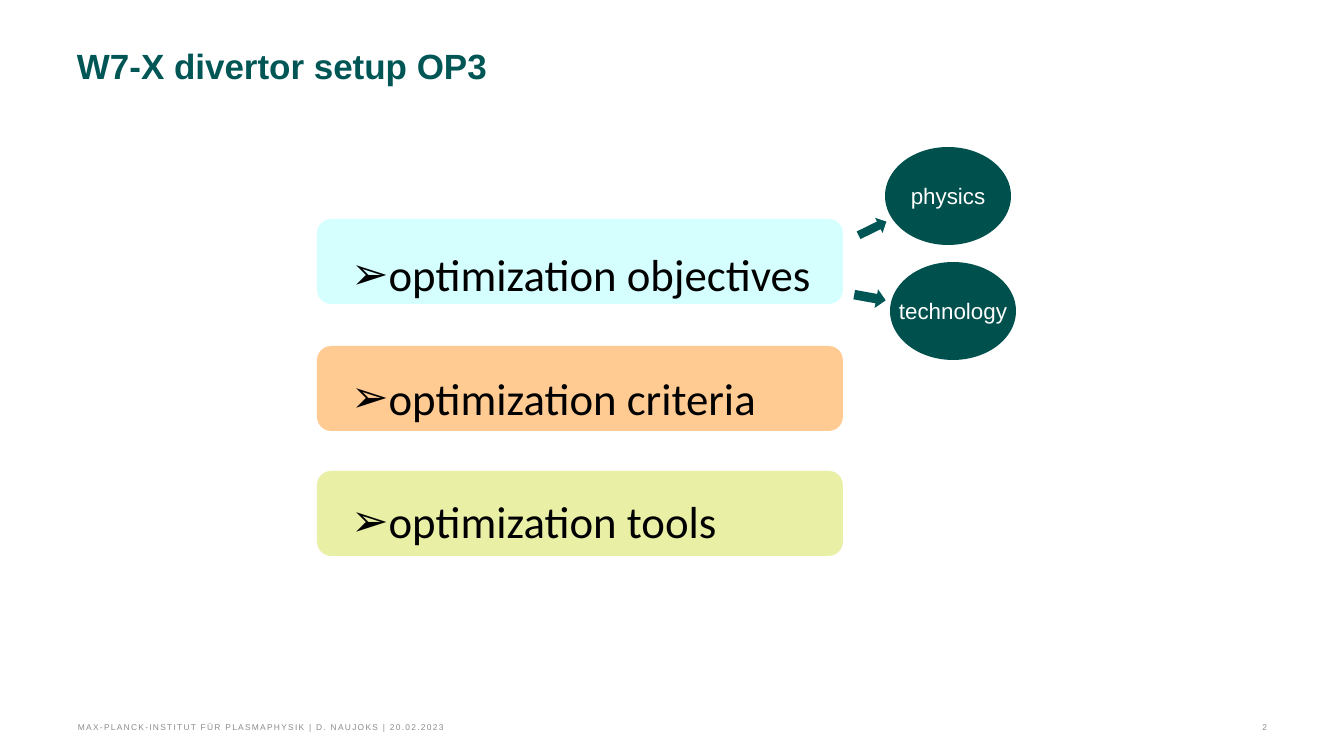
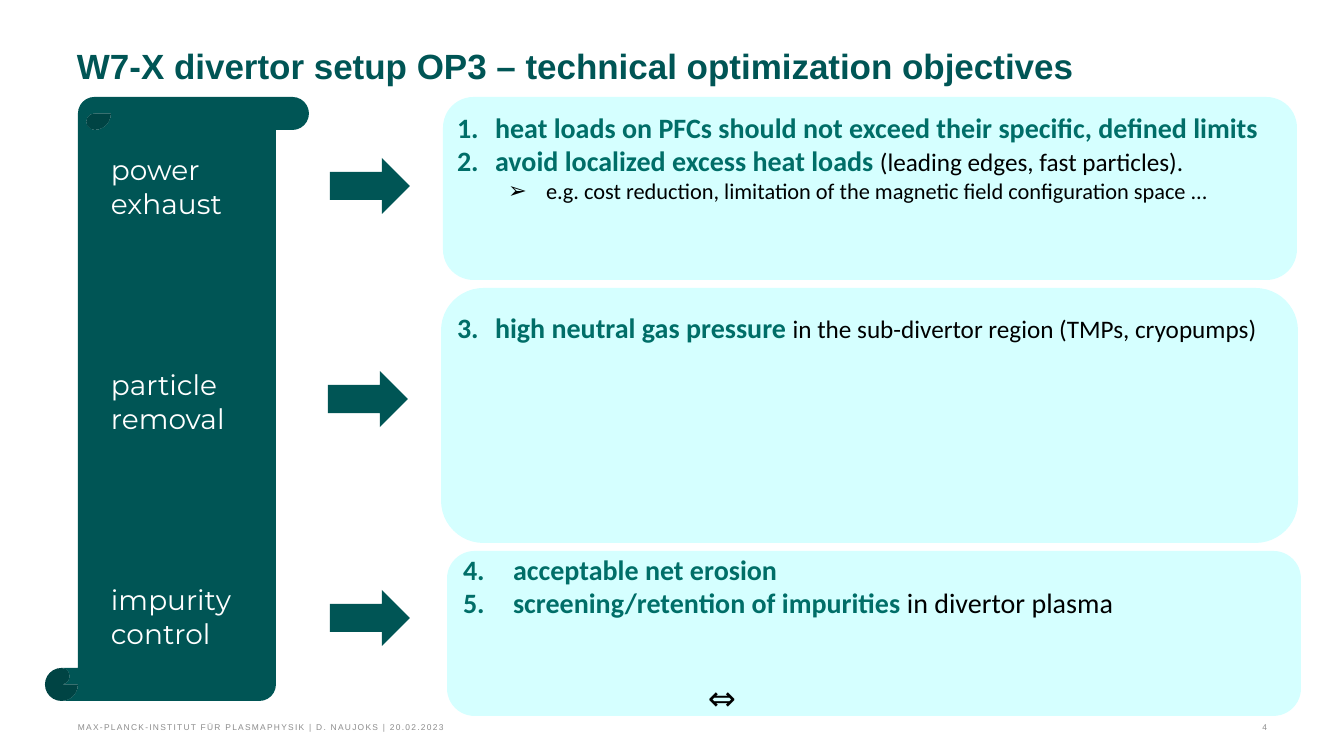
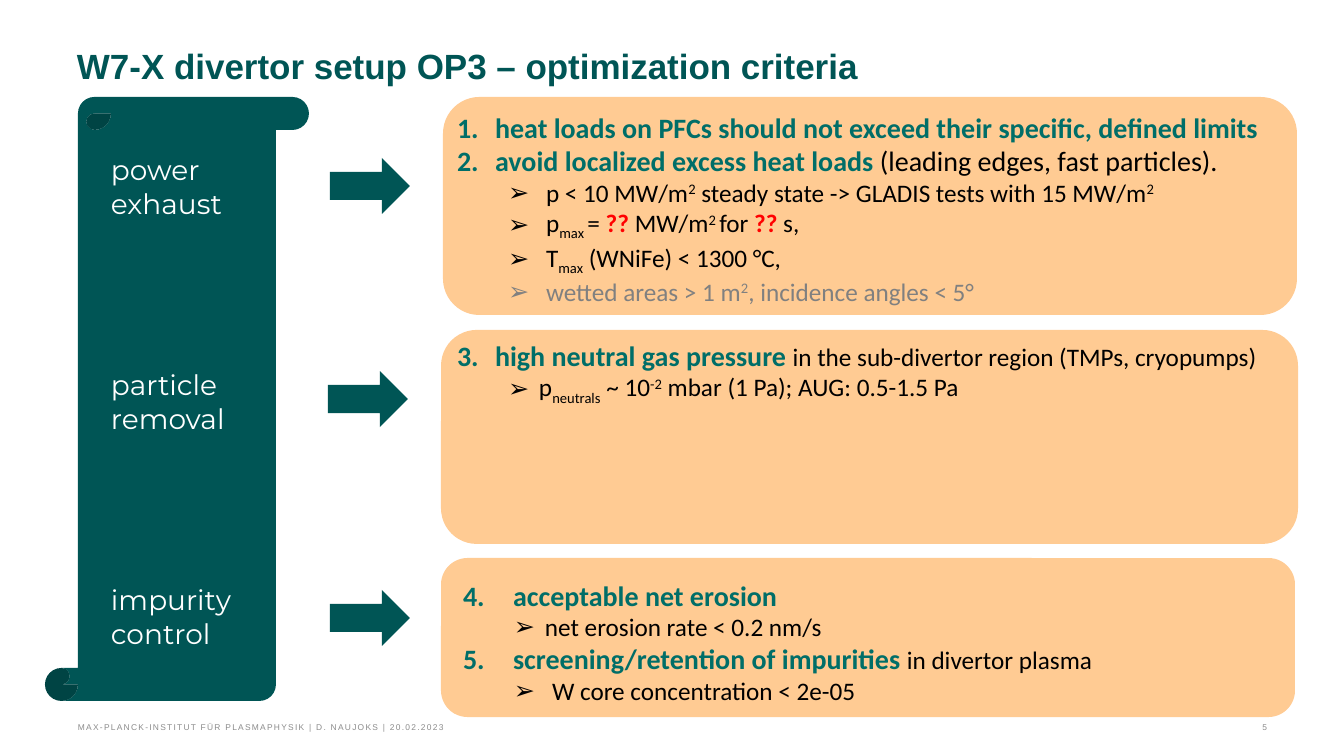
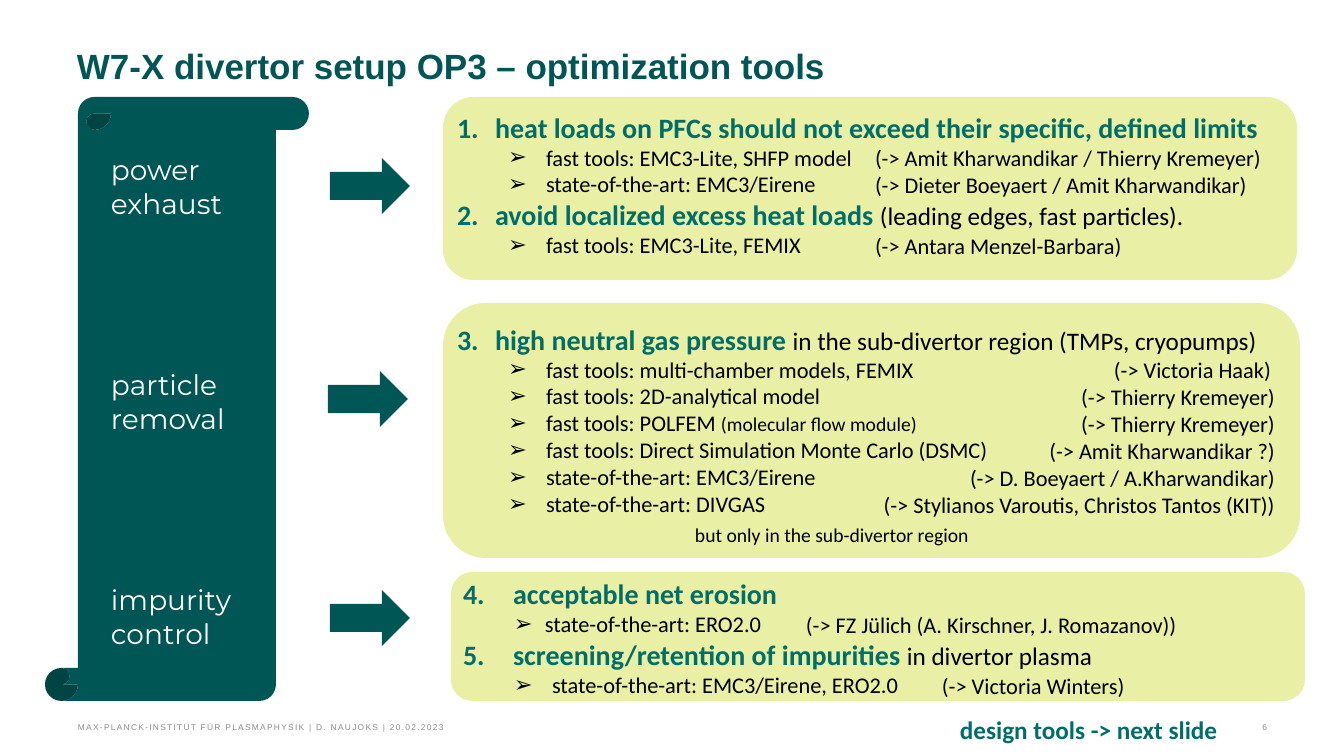
from dataclasses import dataclass
from lxml import etree
from pptx import Presentation
from pptx.dml.color import RGBColor
from pptx.enum.shapes import MSO_SHAPE
from pptx.enum.text import MSO_ANCHOR, MSO_AUTO_SIZE, PP_ALIGN
from pptx.oxml.ns import qn
from pptx.util import Pt

PX = 914400 / 100.8
LEFT, CENTER, RIGHT = PP_ALIGN.LEFT, PP_ALIGN.CENTER, PP_ALIGN.RIGHT
TOP, MIDDLE, BOTTOM = MSO_ANCHOR.TOP, MSO_ANCHOR.MIDDLE, MSO_ANCHOR.BOTTOM
ROUND, OVAL = MSO_SHAPE.ROUNDED_RECTANGLE, MSO_SHAPE.OVAL
ARROW, SCROLL = MSO_SHAPE.RIGHT_ARROW, MSO_SHAPE.VERTICAL_SCROLL


@dataclass(frozen=True)
class Style:
    font: str
    size: int
    color: str
    bold: bool = False
    baseline: int = 0
    spacing: int = 0


class Theme:
    green, oval = "005555", "00514D"
    cyan, orange, lime = "D5FFFF", "FFCB93", "EAEFA6"
    title = Style("Arial", 25, green, True)
    footer = Style("Arial", 6, "8C8C8C", spacing=90)
    topic = Style("Calibri", 32, "000000")
    bubble = Style("Arial", 16, "FFFFFF")
    label = Style("Montserrat", 20, "FFFFFF")
    head = Style("Calibri", 20, "006E68", True)
    large = Style("Calibri", 20, "000000")
    body = Style("Calibri", 18, "000000")
    sup = Style("Calibri", 18, "000000", baseline=30000)
    sub = Style("Calibri", 18, "000000", baseline=-25000)
    alert = Style("Calibri", 18, "FF0000", True)
    grey = Style("Calibri", 18, "808080")
    grey_sup = Style("Calibri", 18, "808080", baseline=30000)
    small = Style("Calibri", 16, "000000")
    tiny = Style("Calibri", 14, "000000")
    symbol = Style("Calibri", 24, "000000")
    pointer = Style("Calibri", 18, "006E68", True)


T = Theme
FOOTER = "MAX-PLANCK-INSTITUT FÜR PLASMAPHYSIK | D. NAUJOKS | 20.02.2023"

# Paragraph kinds: left margin and hanging indent in px
INDENTS = {"topic": (31, 31), "head": (38, 38), "wide": (50, 50),
           "item": (89, 38), "near": (82, 31), "tail": (238, 0)}
LINE_HEIGHT = {"head": 34, "wide": 34, "item": 27, "near": 27, "tail": 27}

TOPICS = [("optimization objectives", T.cyan, 219),
          ("optimization criteria", T.orange, 346),
          ("optimization tools", T.lime, 471)]
BUBBLES = [("technology", (890, 262)), ("physics", (885, 147))]
TOPIC_ARROWS = [((857, 220, 31, 17), 333.8), ((854, 288, 32, 19), 10.3)]

LABELS = [("power", "exhaust"), ("particle", "removal"), ("impurity", "control")]
LABEL_TOP, LABEL_STEP = 148, 215
ARROWS = [(330, 158), (328, 371), (330, 590)]

LIMITS = ("head", [("heat loads on PFCs should not exceed their specific, defined limits", T.head)])
LOCAL = ("avoid localized excess heat loads ", T.head)
LEADING = "(leading edges, fast particles)."
PRESSURE = ("head", [("high neutral gas pressure ", T.head),
                     ("in the sub-divertor region (TMPs, cryopumps)", T.body)])
EROSION = ("wide", [("acceptable net erosion", T.head)])
SCREENING = ("screening/retention of impurities ", T.head)
IN_PLASMA = "in divertor plasma"


def tool(text, credit, x, align=LEFT, kind="item", extra=()):
    """A small list row whose credit stands at (or ends at) x on the same line."""
    return kind, [(text, T.small), *extra], (credit, x, align)


# Each block: panel box, list position, first number, rows
DETAIL_SLIDES = [
    dict(number=4, title="W7-X divertor setup OP3 – technical optimization objectives",
         color=T.cyan, notes=[("⇔", T.symbol, (698, 672, 138, 50))],
         blocks=[
             ((443, 97, 854, 183), (447, 105), 1, [
                 LIMITS,
                 ("head", [LOCAL, (LEADING, T.body)]),
                 ("item", [("e.g. cost reduction, limitation of the magnetic field "
                            "configuration space ...", T.small)])]),
             ((441, 288, 857, 255), (447, 305), 3, [PRESSURE]),
             ((447, 551, 854, 165), (453, 547), 4, [
                 EROSION,
                 ("wide", [SCREENING, (IN_PLASMA, T.large)])]),
         ]),
    dict(number=5, title="W7-X divertor setup OP3 – optimization criteria",
         color=T.orange, notes=[],
         blocks=[
             ((443, 97, 854, 218), (447, 105), 1, [
                 LIMITS,
                 ("head", [LOCAL, (LEADING, T.large)]),
                 ("item", [("p < 10 MW/m", T.body), ("2", T.sup),
                           (" steady state -> GLADIS tests with 15 MW/m", T.body), ("2", T.sup)]),
                 ("item", [("p", T.body), ("max ", T.sub), ("= ", T.body), ("?? ", T.alert),
                           ("MW/m", T.body), ("2 ", T.sup), ("for ", T.body),
                           ("??", T.alert), (" s,", T.body)]),
                 ("item", [("T", T.body), ("max", T.sub), (" (WNiFe) < 1300 °C,", T.body)]),
                 ("item", [("wetted areas > 1 m", T.grey), ("2", T.grey_sup),
                           (", incidence angles < 5°", T.grey)])]),
             ((441, 330, 857, 214), (447, 333), 3, [
                 PRESSURE,
                 ("near", [("p", T.body), ("neutrals", T.sub), (" ~ 10", T.body), ("-2", T.sup),
                           (" mbar (1 Pa); AUG: 0.5-1.5 Pa", T.body)])]),
             ((441, 558, 854, 159), (453, 573), 4, [
                 EROSION,
                 ("near", [("net erosion rate < 0.2 nm/s", T.body)]),
                 ("wide", [SCREENING, (IN_PLASMA, T.body)]),
                 ("item", [("W core concentration < 2e-05", T.body)])]),
         ]),
    dict(number=6, title="W7-X divertor setup OP3 – optimization tools",
         color=T.lime, notes=[("design tools -> next slide", T.pointer, (950, 709, 290, 40))],
         blocks=[
             ((443, 97, 854, 183), (447, 105), 1, [
                 LIMITS,
                 tool("fast tools: EMC3-Lite, SHFP model",
                      "(-> Amit Kharwandikar / Thierry Kremeyer)", 875),
                 tool("state-of-the-art: EMC3/Eirene",
                      "(-> Dieter Boeyaert / Amit Kharwandikar)", 875),
                 ("head", [LOCAL, (LEADING, T.body)]),
                 tool("fast tools: EMC3-Lite, FEMIX", "(-> Antara Menzel-Barbara)", 875)]),
             ((443, 303, 857, 255), (447, 317), 3, [
                 PRESSURE,
                 tool("fast tools: multi-chamber models, FEMIX", "(-> Victoria Haak)", 1271, RIGHT),
                 tool("fast tools: 2D-analytical model", "(-> Thierry Kremeyer)", 1275, RIGHT),
                 tool("fast tools: POLFEM ", "(-> Thierry Kremeyer)", 1275, RIGHT,
                      extra=[("(molecular flow module)", T.tiny)]),
                 tool("fast tools: Direct Simulation Monte Carlo (DSMC)",
                      "(-> Amit Kharwandikar ?)", 1275, RIGHT),
                 tool("state-of-the-art: EMC3/Eirene",
                      "(-> D. Boeyaert / A.Kharwandikar)", 1275, RIGHT),
                 tool("state-of-the-art: DIVGAS",
                      "(-> Stylianos Varoutis, Christos Tantos (KIT))", 1275, RIGHT),
                 ("tail", [("but only in the sub-divertor region", T.tiny)])]),
             ((451, 572, 854, 129), (453, 572), 4, [
                 EROSION,
                 tool("state-of-the-art: ERO2.0",
                      "(-> FZ Jülich (A. Kirschner, J. Romazanov))", 806, kind="near"),
                 ("wide", [SCREENING, (IN_PLASMA, T.body)]),
                 tool("state-of-the-art: EMC3/Eirene, ERO2.0", "(-> Victoria Winters)", 942)]),
         ]),
]


def emu(*lengths):
    return [round(n * PX) for n in lengths]


def place(sp, box):
    sp.left, sp.top, sp.width, sp.height = emu(*box)


def add_run(p, text, style):
    r = p.add_run()
    r.text = text
    f = r.font
    f.name, f.size, f.bold = style.font, Pt(style.size), style.bold
    f.color.rgb = RGBColor.from_string(style.color)
    rPr = r._r.get_or_add_rPr()
    if style.baseline:
        rPr.set("baseline", str(style.baseline))
    if style.spacing:
        rPr.set("spc", str(style.spacing))


def setup_frame(tf, inset=(0, 0), anchor=TOP, wrap=True):
    tf.auto_size = MSO_AUTO_SIZE.NONE
    tf.word_wrap = wrap
    tf.vertical_anchor = anchor
    tf.margin_left = tf.margin_right = emu(inset[0])[0]
    tf.margin_top = tf.margin_bottom = emu(inset[1])[0]


def add_text(s, box, lines, style, align=LEFT, anchor=TOP, inset=(0, 0), wrap=True):
    sp = s.shapes.add_textbox(*emu(*box))
    tf = sp.text_frame
    setup_frame(tf, inset, anchor, wrap)
    for i, line in enumerate(lines):
        p = tf.add_paragraph() if i else tf.paragraphs[0]
        p.alignment = align
        add_run(p, line, style)


def add_block(s, kind, box, color, rotation=0, behind=False):
    """Plain filled shape; behind puts it below the placeholders."""
    sp = s.shapes.add_shape(kind, *emu(*box))
    sp.shadow.inherit = False
    sp.fill.solid()
    sp.fill.fore_color.rgb = RGBColor.from_string(color)
    sp.line.fill.background()
    sp.rotation = rotation
    if behind:
        s.shapes._spTree.insert(2, sp._element)
    return sp


def format_row(p, kind, start):
    """Set indent and bullet of a list row; heads are numbered from start."""
    margin, hang = INDENTS[kind]
    pPr = p._p.get_or_add_pPr()
    pPr.set("marL", str(emu(margin)[0]))
    pPr.set("indent", str(-emu(hang)[0]))
    if kind in ("head", "wide"):
        etree.SubElement(pPr, qn("a:buFont"), typeface="+mj-lt")
        etree.SubElement(pPr, qn("a:buAutoNum"), type="arabicPeriod", startAt=str(start))
    elif kind == "tail":
        etree.SubElement(pPr, qn("a:buNone"))
    else:
        etree.SubElement(pPr, qn("a:buFont"), typeface="Arial")
        etree.SubElement(pPr, qn("a:buChar"), char="➢")
    p.level = int(kind in ("item", "near", "tail"))
    p.alignment = LEFT
    p.space_before = Pt(4 if kind == "tail" else 0)
    p.space_after = Pt(0)


def fill_list(sp, box, rows, start=1, inset=(10, 5)):
    place(sp, box)
    tf = sp.text_frame
    setup_frame(tf, inset)
    for i, (kind, runs, *_) in enumerate(rows):
        p = tf.add_paragraph() if i else tf.paragraphs[0]
        format_row(p, kind, start)
        for text, style in runs:
            add_run(p, text, style)


def add_credits(s, top, rows):
    """Set each credit on the line of its list row."""
    y = top + 5
    for kind, _, *credits in rows:
        height = LINE_HEIGHT[kind]
        for text, x, align in credits:
            width = 420
            left = x - width if align == RIGHT else x
            add_text(s, (left, y, width, height), [text], T.small, align, MIDDLE)
        y += height


def new_slide(prs, layout, title, number):
    s = prs.slides.add_slide(prs.slide_layouts[layout])
    place(s.shapes.title, (77, 47, 1055, 99))
    tf = s.shapes.title.text_frame
    setup_frame(tf)
    p = tf.paragraphs[0]
    p.alignment, p.line_spacing = LEFT, Pt(28)
    add_run(p, title, T.title)
    add_text(s, (78, 716, 1000, 16), [FOOTER], T.footer, anchor=BOTTOM)
    add_text(s, (1231, 716, 36, 16), [str(number)], T.footer, RIGHT, BOTTOM)
    return s


def overview_slide(prs):
    s = new_slide(prs, 1, "W7-X divertor setup OP3", 2)
    body = s.placeholders[1]
    fill_list(body, (351, 193, 490, 360),
              [("topic", [(text, T.topic)]) for text, _, _ in TOPICS], inset=(0, 0))
    for i, p in enumerate(body.text_frame.paragraphs):
        p.line_spacing = 2.0
        p.space_before = Pt(11.5 if i else 0)
    for _, color, top in TOPICS:
        add_block(s, ROUND, (317, top, 526, 85), color, behind=True)
    for text, (x, y) in BUBBLES:
        sp = add_block(s, OVAL, (x, y, 126, 98), T.oval)
        setup_frame(sp.text_frame, anchor=MIDDLE, wrap=False)
        p = sp.text_frame.paragraphs[0]
        p.alignment = CENTER
        add_run(p, text, T.bubble)
    for box, rotation in TOPIC_ARROWS:
        add_block(s, ARROW, box, T.green, rotation)


def detail_slide(prs, number, title, color, notes, blocks):
    s = new_slide(prs, 4, title, number)
    add_block(s, SCROLL, (45, 97, 264, 604), T.green)
    for i, lines in enumerate(LABELS):
        add_text(s, (101, LABEL_TOP + i * LABEL_STEP, 182, 80), lines, T.label, inset=(10, 5))
    for x, y in ARROWS:
        add_block(s, ARROW, (x, y, 80, 56), T.green)
    for idx, (panel, (x, y), start, rows) in enumerate(blocks, 1):
        add_block(s, ROUND, panel, color, behind=True)
        fill_list(s.placeholders[idx], (x, y, 870, panel[1] + panel[3] - y), rows, start)
        add_credits(s, y, rows)
    spare = s.placeholders[4]._element
    spare.getparent().remove(spare)
    for text, style, box in notes:
        add_text(s, box, [text], style, inset=(10, 5))


def main():
    prs = Presentation()
    prs.slide_width, prs.slide_height = emu(1344, 756)
    overview_slide(prs)
    for content in DETAIL_SLIDES:
        detail_slide(prs, **content)
    prs.save("out.pptx")


if __name__ == "__main__":
    main()
